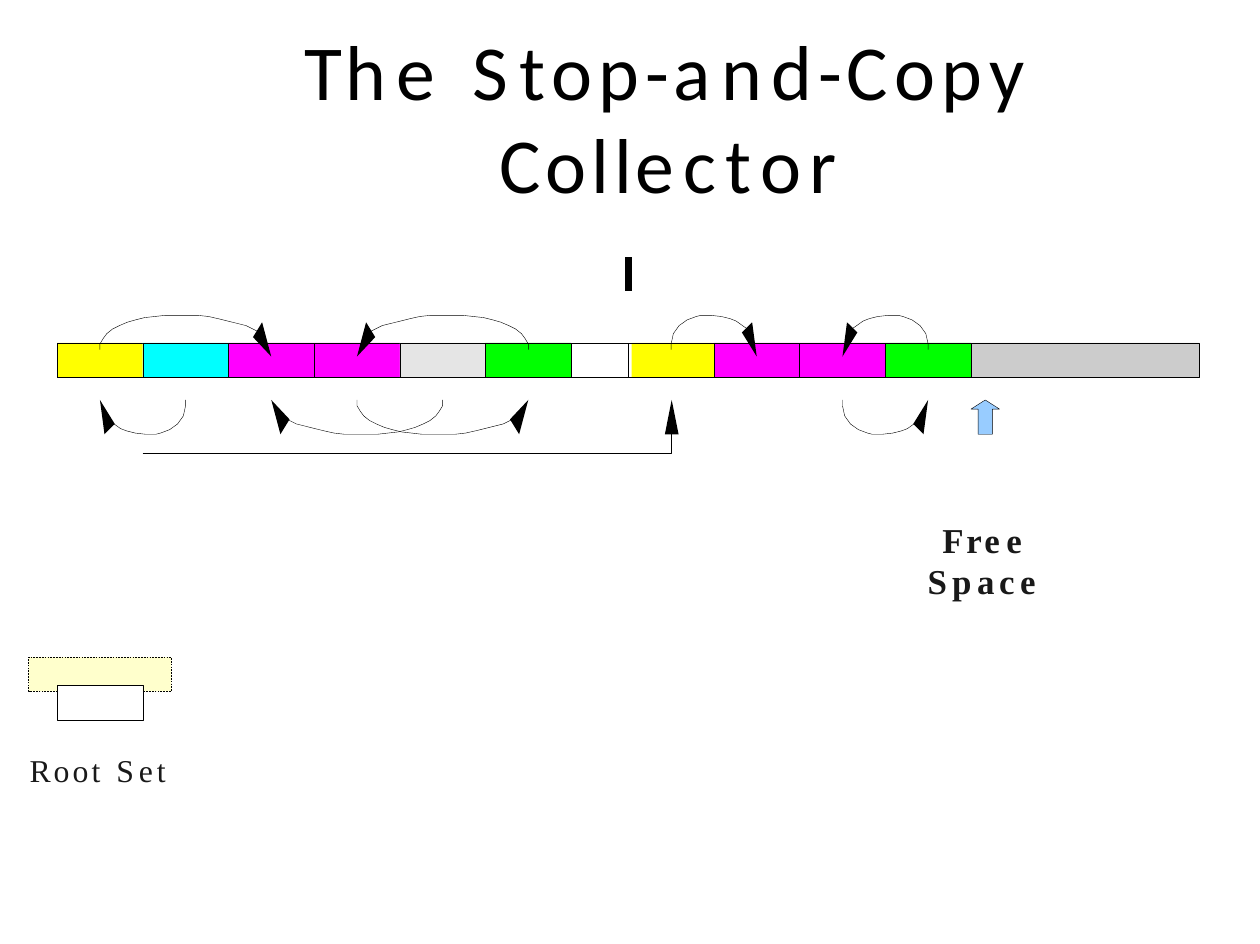
from pptx import Presentation
from pptx.dml.color import RGBColor
from pptx.enum.dml import MSO_LINE
from pptx.enum.shapes import MSO_CONNECTOR, MSO_SHAPE
from pptx.enum.text import MSO_ANCHOR, MSO_AUTO_SIZE, PP_ALIGN
from pptx.oxml.ns import qn
from pptx.util import Inches, Pt

BLACK = RGBColor(0x00, 0x00, 0x00)
WHITE = RGBColor(0xFF, 0xFF, 0xFF)
INK = RGBColor(0x19, 0x19, 0x19)
YELLOW = RGBColor(0xFF, 0xFF, 0x00)
CYAN = RGBColor(0x00, 0xFF, 0xFF)
MAGENTA = RGBColor(0xFF, 0x00, 0xFF)
GREEN = RGBColor(0x00, 0xFF, 0x00)
LIGHT_GRAY = RGBColor(0xE5, 0xE5, 0xE5)
FREE_GRAY = RGBColor(0xCC, 0xCC, 0xCC)
CREAM = RGBColor(0xFF, 0xFF, 0xCC)
SKY = RGBColor(0x98, 0xCC, 0xFF)

RECT, UP_ARROW = MSO_SHAPE.RECTANGLE, MSO_SHAPE.UP_ARROW
TRIANGLE = MSO_SHAPE.ISOSCELES_TRIANGLE
STRAIGHT, DASH = MSO_CONNECTOR.STRAIGHT, MSO_LINE.DASH
MIDDLE, CENTER, LEFT = MSO_ANCHOR.MIDDLE, PP_ALIGN.CENTER, PP_ALIGN.LEFT
NO_FIT = MSO_AUTO_SIZE.NONE

CELL, HEIGHT = 0.75, 0.3
WIDE_ARC = [(0, 0), (0, 0.05), (0.03, 0.1), (0.06, 0.14), (0.11, 0.18),
            (0.17, 0.21), (0.24, 0.24), (0.31, 0.26), (0.39, 0.28),
            (0.48, 0.29), (0.57, 0.3), (0.67, 0.3), (0.76, 0.3), (0.86, 0.3),
            (0.95, 0.29), (1.04, 0.27), (1.12, 0.25), (1.2, 0.23),
            (1.28, 0.21), (1.34, 0.18), (1.4, 0.15)]
WIDE_HEAD = [(1.5, 0), (1.34, 0.17), (1.42, 0.3)]
SHORT_ARC = [(0, 0), (0, 0.05), (0.02, 0.14), (0.07, 0.21), (0.14, 0.26),
             (0.22, 0.29), (0.26, 0.3), (0.35, 0.3), (0.44, 0.29),
             (0.48, 0.28), (0.52, 0.27), (0.57, 0.25), (0.64, 0.2),
             (0.67, 0.18)]
SHORT_HEAD = [(0.75, 0), (0.62, 0.21), (0.71, 0.3)]


def paint(sp, fill=None, line=None):
    """Give a shape a plain fill and a hairline, or neither."""
    sp.shadow.inherit = False
    if fill is None:
        sp.fill.background()
    else:
        sp.fill.solid()
        sp.fill.fore_color.rgb = fill
    if line is None:
        sp.line.fill.background()
    else:
        sp.line.color.rgb = line
        sp.line.width = Pt(0.25)
    return sp


def add_box(s, box, fill=None, line=None, kind=RECT):
    """Add a preset shape in a box given in inches."""
    return paint(s.shapes.add_shape(kind, *map(Inches, box)), fill, line)


def add_outline(s, points, fill=None, line=None):
    """Add a freeform through points, closed when it is filled."""
    start, *rest = [(Inches(x), Inches(y)) for x, y in points]
    builder = s.shapes.build_freeform(*start)
    builder.add_line_segments(rest, close=fill is not None)
    return paint(builder.convert_to_shape(), fill, line)


def add_text(sp, runs, font, align, left=0, indent=0, leading=None):
    """Write letter-spaced runs into a shape without margins."""
    tf = sp.text_frame
    frame = dict(word_wrap=True, auto_size=NO_FIT, margin_left=0,
                 margin_right=0, margin_top=0, margin_bottom=0)
    for name, value in frame.items():
        setattr(tf, name, value)
    p = tf.paragraphs[0]
    p.alignment = align
    if leading:
        p.line_spacing = Pt(leading)
    pPr = p._p.get_or_add_pPr()
    pPr.set("marL", str(Inches(left)))
    pPr.set("indent", str(Inches(indent)))
    color = font.pop("color")
    for text, spacing in runs:
        r = p.add_run()
        r.text = text
        for name, value in font.items():
            setattr(r.font, name, value)
        r.font.color.rgb = color
        r._r.get_or_add_rPr().set("spc", str(round(spacing * 100)))
    return tf


def add_label(s, box, runs, size, bold=False, **layout):
    """Add a serif label in a box."""
    sp = s.shapes.add_textbox(*map(Inches, box))
    font = dict(name="Times New Roman", size=Pt(size), bold=bold, color=INK)
    add_text(sp, runs, font, LEFT, **layout)


def add_title(s, box):
    """Move and fill the title placeholder."""
    sp = s.shapes.title
    sp.left, sp.top, sp.width, sp.height = map(Inches, box)
    runs = [("T", 2.4), ("h", 6.1), ("e ", 6.4), ("S", 7.2), ("t", 3.5),
            ("op", 3.9), ("-", 2.6), ("a", 6.6), ("n", 6.1), ("d", 3.6),
            ("-", 2.5), ("Cop", 4.3), ("y ", 4), ("Col", 3.3), ("l", 1.8),
            ("e", 5.8), ("c", 5.9), ("t", 5.3), ("or", 5.2)]
    font = dict(name="Calibri", size=Pt(49), bold=False, color=BLACK)
    tf = add_text(sp, runs, font, CENTER, left=0.66)
    tf.vertical_anchor = MIDDLE


def add_cells(s, box, colors):
    """Fill a memory half with equal cells from its left edge."""
    x, y, w, h = box
    add_box(s, box, line=BLACK)
    for i, color in enumerate(colors):
        add_box(s, (x + i * CELL, y, CELL, h), color, BLACK)


def add_pointer(s, box, start, end, above):
    """Draw a curved pointer between the centres of two cells."""
    x, y, w, h = box
    wide = abs(end - start) == 2
    arc, head = (WIDE_ARC, WIDE_HEAD) if wide else (SHORT_ARC, SHORT_HEAD)
    x0 = x + (start + 0.5) * CELL
    side = 1 if end > start else -1
    arc_y, head_y, up = (y + 0.06, y + 0.12, -1) if above else (y + 0.5, y + 0.5, 1)
    add_outline(s, [(x0 + side * dx, arc_y + up * dy) for dx, dy in arc], line=BLACK)
    add_outline(s, [(x0 + side * dx, head_y + up * dy) for dx, dy in head], BLACK)


def add_from_space(s, box):
    """Draw the old half of memory with its pointers."""
    add_cells(s, box, [YELLOW, CYAN, MAGENTA, MAGENTA, LIGHT_GRAY, GREEN])
    for start, end, above in [(0, 2, True), (3, 5, False), (5, 3, True),
                              (4, 2, False), (1, 0, False)]:
        add_pointer(s, box, start, end, above)


def add_to_space(s, box):
    """Draw the new half of memory with its divider, pointers and free space."""
    x, y, w, h = box
    add_box(s, (x + 4 * CELL, y, w - 4 * CELL, h), FREE_GRAY)
    add_cells(s, box, [WHITE, MAGENTA, MAGENTA, GREEN])
    add_box(s, (x + 0.03, y, CELL - 0.03, h), YELLOW)
    add_box(s, (x, y, CELL, h), line=BLACK)
    divider = s.shapes.add_connector(
        STRAIGHT, *map(Inches, (x, y - 0.75, x, y - 0.45)))
    divider.line.color.rgb = BLACK
    divider.line.width = Pt(4.3)
    spPr = divider._element.spPr
    spPr.append(spPr.makeelement(qn("a:effectLst"), {}))
    for start, end, above in [(0, 1, True), (3, 2, True), (2, 3, False)]:
        add_pointer(s, box, start, end, above)


def add_free_pointer(s, box):
    """Draw the free-space arrow and its label."""
    x, y, w, h = box
    sp = add_box(s, box, SKY, BLACK, UP_ARROW)
    sp.adjustments[0], sp.adjustments[1] = 0.5, 0.32
    runs = [("F", 1.8), ("r", 1.6), ("e", 4), ("e ", 4.1), ("Sp", 3.4),
            ("a", 3), ("c", 3.5), ("e", 4.1)]
    add_label(s, (x - 0.39, y + 1.05, 1.04, 0.72), runs, 22, bold=True,
              left=0.01, indent=0.13, leading=25.8)


def add_root_set(s, box):
    """Draw the root set with its slot and label."""
    x, y, w, h = box
    add_box(s, box, CREAM, BLACK).line.dash_style = DASH
    add_box(s, (x + 0.25, y + 0.25, CELL, h), WHITE, BLACK)
    runs = [("R", 1.7), ("oo", 2), ("t ", 2.5), ("S", 3), ("e", 2.4), ("t", 2.5)]
    add_label(s, (x, y + 0.82, 1.24, 0.33), runs, 20, left=0.01)


def add_root_pointer(s, box):
    """Draw the elbow pointer that ends at the top right of its box."""
    x, y, w, h = box
    right, bottom = x + w, y + h
    add_outline(s, [(x, bottom), (right, bottom), (right, y + 0.17)], line=BLACK)
    add_box(s, (right - 0.06, y, 0.12, HEIGHT), BLACK, kind=TRIANGLE)


def main():
    """Build and save the slide."""
    prs = Presentation()
    prs.slide_width, prs.slide_height = Inches(11.03), Inches(8.26)
    s = prs.slides.add_slide(prs.slide_layouts[5])
    add_title(s, (0.55, 0.19, 9.93, 1.65))
    add_from_space(s, (0.5, 3, 5, HEIGHT))
    add_to_space(s, (5.5, 3, 5, HEIGHT))
    add_free_pointer(s, (8.5, 3.5, 0.25, HEIGHT))
    add_root_set(s, (0.25, 5.75, 1.25, HEIGHT))
    add_root_pointer(s, (1.25, 3.5, 4.63, 0.47))
    prs.save("out.pptx")


if __name__ == "__main__":
    main()
